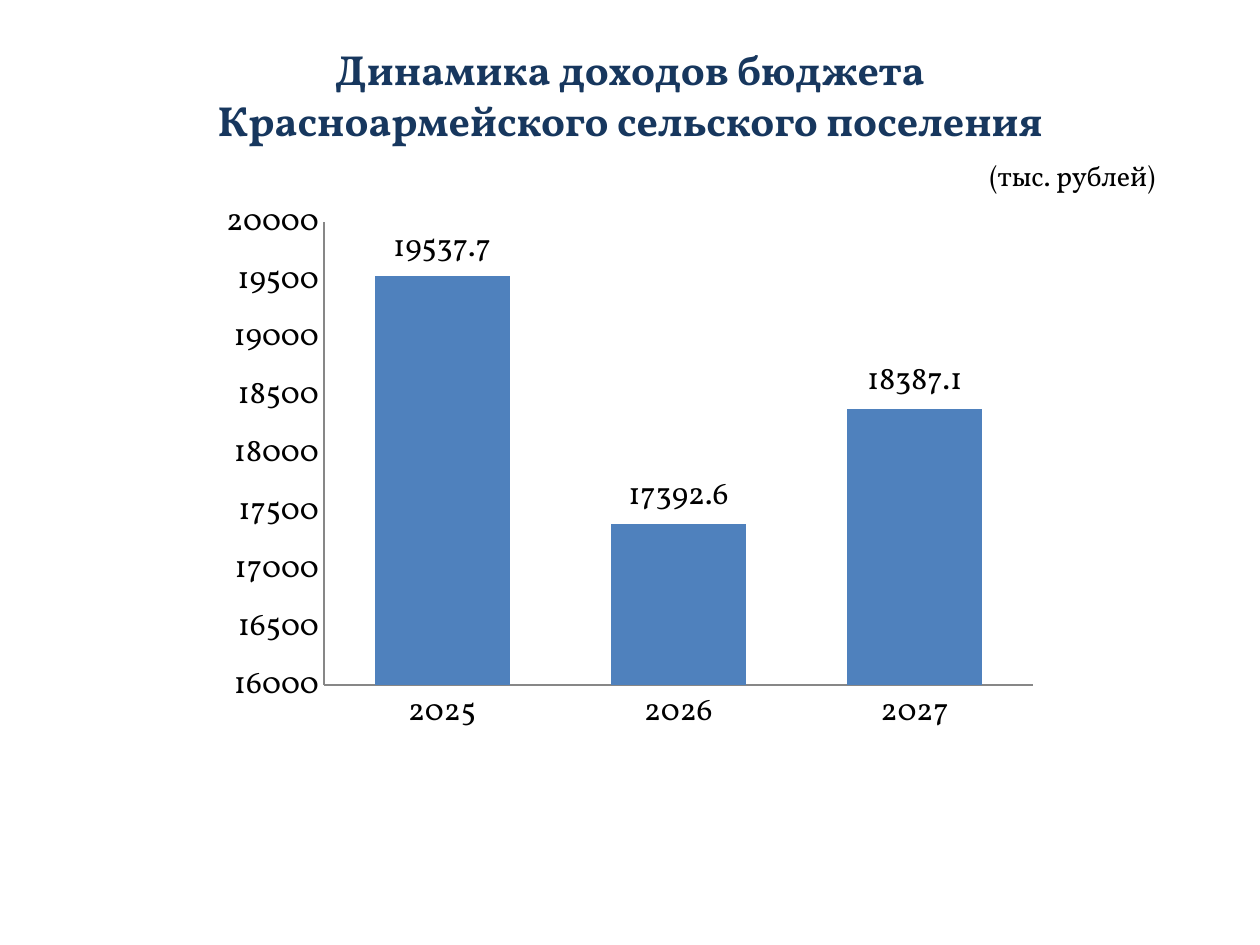
import pptx
import pptx.chart.data
import pptx.dml.color
import pptx.enum.chart
import pptx.enum.text
import pptx.oxml
import pptx.oxml.ns
import pptx.util

RGB = pptx.dml.color.RGBColor
NAVY = RGB(0x17, 0x37, 0x5E)
BLUE = RGB(0x4F, 0x81, 0xBD)
GREY = RGB(0x87, 0x87, 0x87)
BLACK = RGB(0, 0, 0)
Pt = pptx.util.Pt
Inches = pptx.util.Inches
ALIGN = pptx.enum.text.PP_ALIGN
ANCHOR = pptx.enum.text.MSO_ANCHOR
CHART = pptx.enum.chart


def apply(item, style):
    for key, value in style.items():
        setattr(item, key, value)


class Deck:
    face = "Vollkorn"

    def __init__(self, width, height):
        self.show = pptx.Presentation()
        apply(self.show, {"slide_width": Inches(width), "slide_height": Inches(height)})
        self.slide = self.show.slides.add_slide(self.show.slide_layouts[6])

    def area(self, left, top, width, height):
        wide, high = self.show.slide_width, self.show.slide_height
        return int(left * wide), int(top * high), int(width * wide), int(height * high)

    def font(self, font, size, color, bold=False):
        apply(font, {"name": self.face, "size": Pt(size), "bold": bold})
        font.color.rgb = color

    def text(self, area, lines, inset):
        frame = self.slide.shapes.add_textbox(*self.area(*area)).text_frame
        apply(frame, {"word_wrap": True, "vertical_anchor": ANCHOR.MIDDLE,
                      "margin_left": Inches(inset), "margin_right": Inches(inset)})
        for spot, (words, align, gap, style) in enumerate(lines):
            para = frame.add_paragraph() if spot else frame.paragraphs[0]
            apply(para, {"alignment": align, "space_before": Pt(gap)})
            run = para.add_run()
            run.text = words
            self.font(run.font, *style)

    def bars(self, area, plot, years, sums, scale):
        data = pptx.chart.data.CategoryChartData()
        data.categories = years
        data.add_series("Series 1", sums)
        chart = self.slide.shapes.add_chart(
            CHART.XL_CHART_TYPE.COLUMN_CLUSTERED, *self.area(*area), data).chart
        apply(chart, {"has_legend": False, "has_title": False})
        self.font(chart.font, 18, BLACK)
        for axis in (chart.category_axis, chart.value_axis):
            apply(axis, {"has_major_gridlines": False,
                         "major_tick_mark": CHART.XL_TICK_MARK.NONE,
                         "minor_tick_mark": CHART.XL_TICK_MARK.NONE})
            axis.format.line.color.rgb = GREY
            axis.format.line.width = Pt(0.75)
        apply(chart.value_axis, scale)
        group = chart.plots[0]
        apply(group, {"gap_width": 75, "vary_by_categories": False, "has_data_labels": True})
        apply(group.data_labels, {"show_value": True,
                                  "position": CHART.XL_LABEL_POSITION.OUTSIDE_END})
        fill = group.series[0].format.fill
        fill.solid()
        fill.fore_color.rgb = BLUE
        self.place(chart, plot)

    def place(self, chart, plot):
        marks = [("layoutTarget", "inner"), ("xMode", "edge"), ("yMode", "edge")]
        marks += zip("xywh", plot)
        body = "".join(f'<c:{tag} val="{value}"/>' for tag, value in marks)
        space = pptx.oxml.ns.nsdecls("c")
        layout = pptx.oxml.parse_xml(
            f"<c:layout {space}><c:manualLayout>{body}</c:manualLayout></c:layout>")
        field = chart._chartSpace.chart.plotArea
        for old in field.findall(pptx.oxml.ns.qn("c:layout")):
            field.remove(old)
        field.insert(0, layout)


def main():
    deck = Deck(10, 7.5)
    head = (24, NAVY, True)
    deck.text((0.05, 0.06, 0.9, 0.13), [
        ("Динамика доходов бюджета", ALIGN.CENTER, 0, head),
        ("Красноармейского сельского поселения", ALIGN.CENTER, 0, head),
        ("(тыс. рублей)", ALIGN.RIGHT, 8, (16, BLACK)),
    ], 0.33)
    deck.bars((0.17, 0.2, 0.67, 0.59), (0.13, 0.06, 0.84, 0.83),
              ("2025", "2026", "2027"), (19537.7, 17392.6, 18387.1),
              {"minimum_scale": 16000, "maximum_scale": 20000, "major_unit": 500})
    deck.show.save("out.pptx")


if __name__ == "__main__":
    main()
